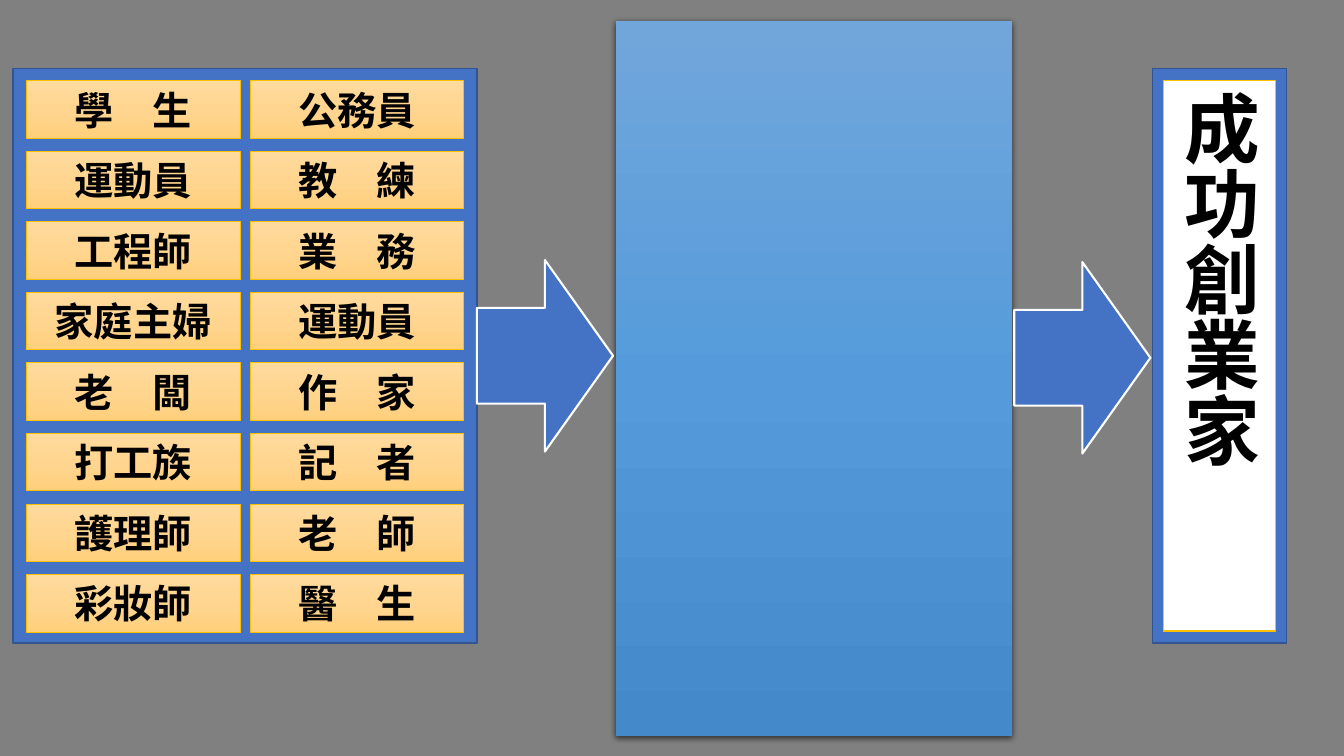
from copy import deepcopy

from lxml import etree
from pptx import Presentation
from pptx.dml.color import RGBColor
from pptx.enum.shapes import MSO_SHAPE
from pptx.enum.text import MSO_ANCHOR, PP_ALIGN
from pptx.oxml.ns import qn
from pptx.util import Inches, Pt

RECT, ARROW = MSO_SHAPE.RECTANGLE, MSO_SHAPE.RIGHT_ARROW
CENTER, LEFT, MIDDLE = PP_ALIGN.CENTER, PP_ALIGN.LEFT, MSO_ANCHOR.MIDDLE
FONT = "Noto Sans CJK SC"
COLORS = {
    "backdrop": "808080",
    "blue": "4472C4",
    "blue_edge": "325491",
    "gold": "FFC000",
    "white": "FFFFFF",
    "black": "000000",
}
PANEL_GRADIENT = ["71A6DB", "559BDB", "448ACA"]
JOB_GRADIENT = ["FFDB9E", "FFD590", "FFD07C"]
JOB_COLUMNS = [
    ["學　生", "運動員", "工程師", "家庭主婦", "老　闆", "打工族", "護理師", "彩妝師"],
    ["公務員", "教　練", "業　務", "運動員", "作　家", "記　者", "老　師", "醫　生"],
]


def add_block(shapes, kind, box, fill, line=None, width=1):
    """Add a shape filled with a colour name or a three-colour vertical gradient."""
    sp = shapes.add_shape(kind, *[Inches(v) for v in box])
    sp.shadow.inherit = False
    if isinstance(fill, list):
        sp.fill.gradient()
        sp.fill.gradient_angle = 270
        stop_list = sp._element.spPr.find(qn("a:gradFill")).find(qn("a:gsLst"))
        stop_list.insert(1, deepcopy(stop_list[0]))
        for i, (stop, color) in enumerate(zip(sp.fill.gradient_stops, fill)):
            stop.color.rgb = RGBColor.from_string(color)
            stop.position = i / 2
    else:
        sp.fill.solid()
        sp.fill.fore_color.rgb = RGBColor.from_string(COLORS[fill])
    if line:
        sp.line.color.rgb = RGBColor.from_string(COLORS[line])
        sp.line.width = Pt(width)
    else:
        sp.line.fill.background()
    return sp


def add_label(sp, text, size, align):
    tf = sp.text_frame
    tf.word_wrap = True
    tf.vertical_anchor = MIDDLE
    p = tf.paragraphs[0]
    p.alignment = align
    r = p.add_run()
    r.text = text
    for name, value in {"name": FONT, "size": Pt(size), "bold": True}.items():
        setattr(r.font, name, value)
    r.font.color.rgb = RGBColor.from_string(COLORS["black"])
    etree.SubElement(r._r.get_or_add_rPr(), qn("a:ea"), typeface=FONT)


prs = Presentation()
prs.slide_width, prs.slide_height = Inches(13.33), Inches(7.5)
s = prs.slides.add_slide(prs.slide_layouts[6])
s.background.fill.solid()
s.background.fill.fore_color.rgb = RGBColor.from_string(COLORS["backdrop"])

# Centre panel with a soft shadow
panel = add_block(s.shapes, RECT, (6.11, 0.21, 3.93, 7.09), PANEL_GRADIENT)
effects = panel._element.spPr.find(qn("a:effectLst"))
shadow = etree.SubElement(effects, qn("a:outerShdw"), blurRad=str(Pt(4.5)),
                          dist=str(Pt(1.5)), dir="5400000", algn="ctr", rotWithShape="0")
shadow_color = etree.SubElement(shadow, qn("a:srgbClr"), val=COLORS["black"])
etree.SubElement(shadow_color, qn("a:alpha"), val="63000")

# Starting occupations
jobs = s.shapes.add_group_shape()
add_block(jobs.shapes, RECT, (0.13, 0.68, 4.6, 5.7), "blue", "blue_edge")
for col, names in enumerate(JOB_COLUMNS):
    for row, name in enumerate(names):
        box = (0.26 + 2.22 * col, 0.8 + 0.7 * row, 2.12, 0.57)
        job = add_block(jobs.shapes, RECT, box, JOB_GRADIENT, "gold", 0.5)
        add_label(job, name, 28, CENTER)

# Outcome
goal = s.shapes.add_group_shape()
add_block(goal.shapes, RECT, (11.43, 0.68, 1.33, 5.7), "blue", "blue_edge")
banner = add_block(goal.shapes, RECT, (11.54, 0.8, 1.11, 5.46), "white", "gold")
add_label(banner, "成功創業家", 54, LEFT)
banner.text_frame._txBody.bodyPr.set("vert", "eaVert")

for left, top in [(4.73, 2.58), (10.06, 2.6)]:
    add_block(s.shapes, ARROW, (left, top, 1.35, 1.9), "blue", "white", 1.5)

prs.save("out.pptx")
